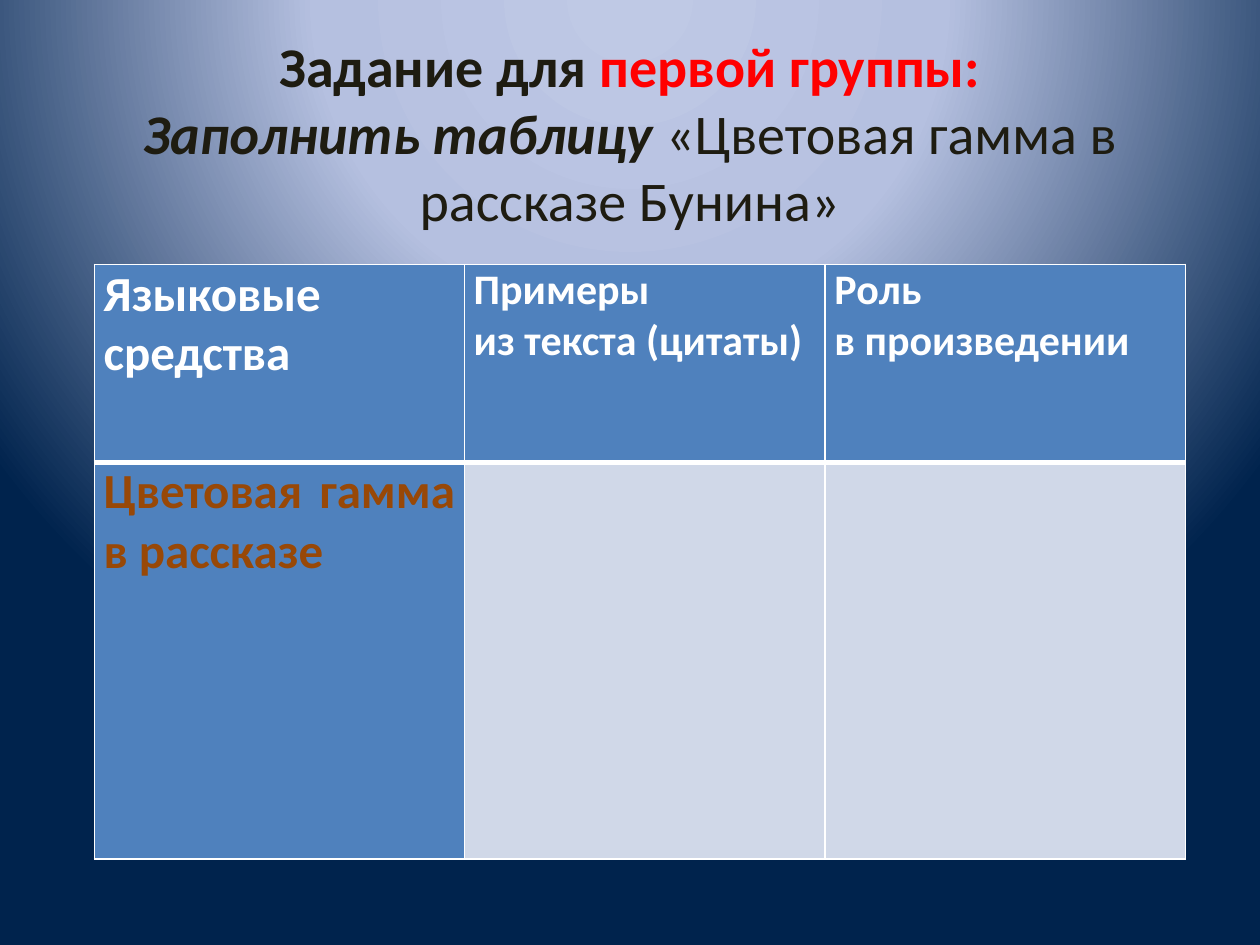
"""Build a task slide with a heading and a table to be filled in."""
from lxml.etree import SubElement
from pptx import Presentation
from pptx.dml.color import RGBColor
from pptx.enum.text import MSO_ANCHOR as Anchor, PP_ALIGN as Align
from pptx.oxml import parse_xml
from pptx.oxml.ns import nsdecls, qn
from pptx.util import Cm, Pt


def paint(target, color):
    target.solid()
    target.fore_color.rgb = RGBColor.from_string(color)


def add_border(cell, index, side, points):
    line = parse_xml(
        f'<a:{side} {nsdecls("a")} w="{Pt(points)}"><a:solidFill>'
        f'<a:srgbClr val="FFFFFF"/></a:solidFill></a:{side}>')
    cell._tc.get_or_add_tcPr().insert(index, line)


deck = Presentation()
deck.slide_width, deck.slide_height = Cm(25.4), Cm(19.05)
page = deck.slides.add_slide(deck.slide_layouts[6])

paint(page.background.fill, "00234D")
solid = page.element.find(".//" + qn("a:solidFill"))
gradient = parse_xml(f'<a:gradFill {nsdecls("a")} rotWithShape="1"/>')
stops = SubElement(gradient, qn("a:gsLst"))
for percent, color in [(0, "BFC9E5"), (40, "B5C0E0"), (100, "00234D")]:
    stop = SubElement(stops, qn("a:gs"), pos=str(percent * 1000))
    SubElement(stop, qn("a:srgbClr"), val=color)
shade = SubElement(gradient, qn("a:path"), {"path": "circle"})
SubElement(shade, qn("a:fillToRect"), l="50000", t="-80000", r="50000", b="180000")
solid.getparent().replace(solid, gradient)

box = page.shapes.add_textbox(Cm(1.27), Cm(0.76), Cm(22.86), Cm(5.16))
frame = box.text_frame
frame.word_wrap = True
frame.vertical_anchor = Anchor.MIDDLE
frame.margin_bottom = Cm(1.48)
para = frame.paragraphs[0]
para.alignment = Align.CENTER
para.font.name, para.font.size = "Calibri", Pt(32)
heading = [
    ("Задание для ", "1E1C11", True, False),
    ("первой группы:", "FF0000", True, False),
    ("Заполнить таблицу ", "1E1C11", True, True),
    ("«Цветовая гамма в рассказе Бунина»", "1E1C11", False, False),
]
for text, color, bold, italic in heading:
    if italic:
        para.add_line_break()
    span = para.add_run()
    span.text = text
    span.font.bold, span.font.italic = bold, italic
    paint(span.font.fill, color)

cells = [
    [("Языковые средства", 28, "FFFFFF", "4F81BD"),
     ("Примеры \nиз текста (цитаты)", 24, "FFFFFF", "4F81BD"),
     ("Роль \nв произведении", 24, "FFFFFF", "4F81BD")],
    [("Цветовая гамма в рассказе", 28, "984807", "4F81BD"),
     ("", 24, "984807", "D0D8E8"),
     ("", 24, "984807", "D0D8E8")],
]
table = page.shapes.add_table(2, 3, Cm(1.9), Cm(5.33), Cm(22), Cm(11.99)).table
for column, width in zip(table.columns, [7.46, 7.27, 7.27]):
    column.width = Cm(width)
for row, height in zip(table.rows, [3.99, 8]):
    row.height = Cm(height)
for r, line in enumerate(cells):
    for c, (text, size, color, fill) in enumerate(line):
        cell = table.cell(r, c)
        cell.margin_left = cell.margin_right = Cm(0.19)
        cell.margin_top = cell.margin_bottom = Cm(0)
        cell.text = text
        for para in cell.text_frame.paragraphs:
            para.alignment = Align.JUSTIFY
            para.font.name, para.font.size = "Calibri", Pt(size)
            para.font.bold = True
            paint(para.font.fill, color)
        widths = {"lnL": 1, "lnR": 1, "lnT": 1 if r == 0 else 3, "lnB": 3 if r == 0 else 1}
        for index, (side, points) in enumerate(widths.items()):
            add_border(cell, index, side, points)
        paint(cell.fill, fill)

deck.save("out.pptx")
